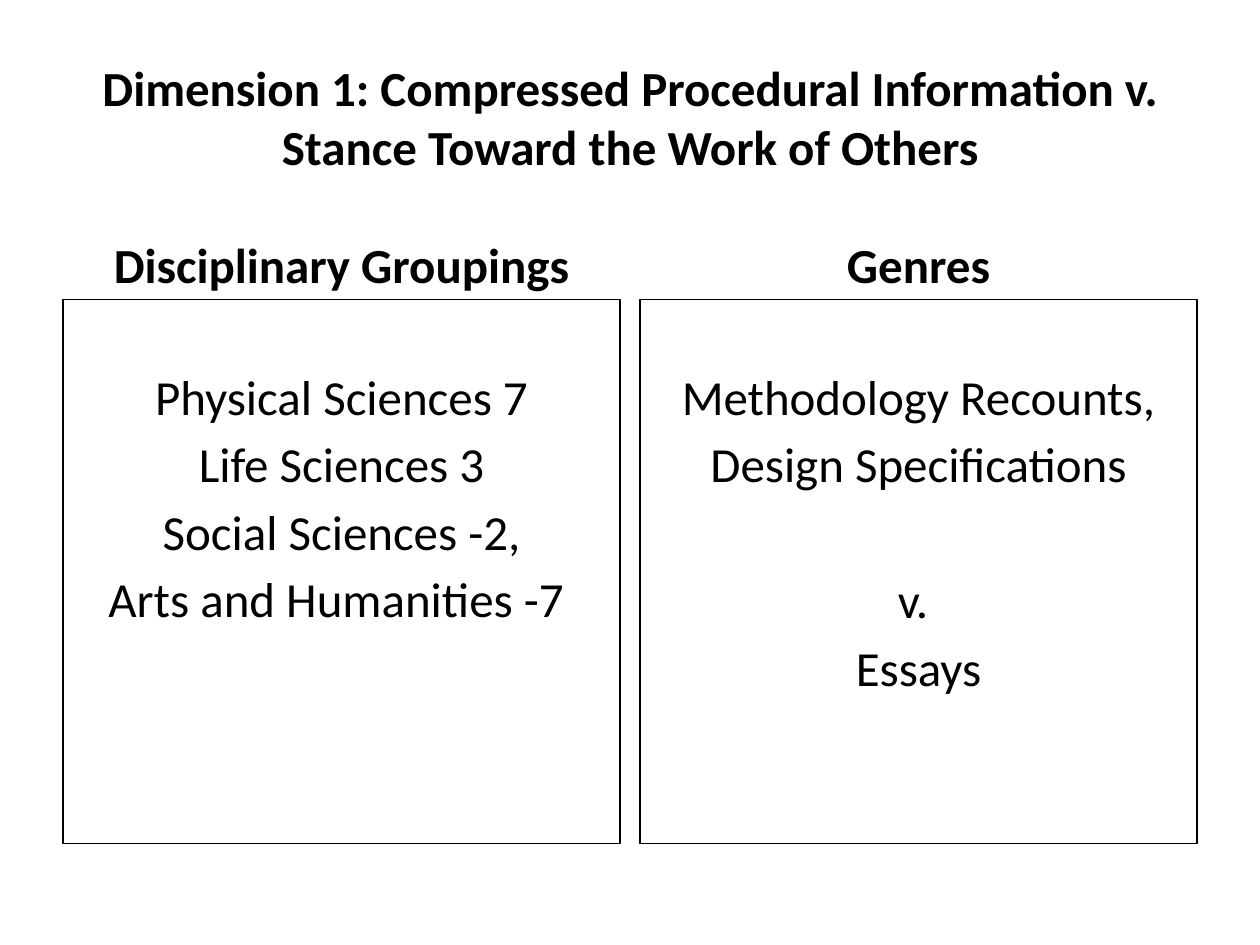
from dataclasses import dataclass
from typing import Any

from lxml.etree import SubElement
from pptx import Presentation
from pptx.dml.color import RGBColor
from pptx.enum.text import MSO_ANCHOR as Anchor, MSO_AUTO_SIZE as Fit, PP_ALIGN as Align
from pptx.oxml.ns import qn
from pptx.util import Inches, Pt

WIDTH, HEIGHT = 10, 7.5
COMPARISON_LAYOUT = 4
MARGIN, COLUMN, GUTTER = 0.05, 0.442, 0.016
HEADING_TOP, HEADING_HEIGHT = 0.224, 0.093
LIST_HEIGHT = 0.576
COLUMNS = [
    ("Disciplinary Groupings",
     ["Physical Sciences 7", "Life Sciences 3", "Social Sciences -2,",
      "Arts and Humanities -7 "], {}),
    ("Genres",
     ["Methodology Recounts,", "Design Specifications", "v. ", "Essays"], {2: 44}),
]


def colour(code):
    """Turn a hex string into a colour."""
    return RGBColor.from_string(code)


@dataclass
class Composer:
    """Hold the style and the current slide."""

    page: Any
    font: str = "Calibri"
    size: int = 28
    ink: str = "000000"
    list_inset: int = 38

    def place(self, index, left, top, width, height, anchor):
        """Move a template placeholder, given shares of the slide."""
        box = next(item for item in self.page.placeholders
                   if item.placeholder_format.idx == index)
        bounds = {"left": Inches(left * WIDTH), "top": Inches(top * HEIGHT),
                  "width": Inches(width * WIDTH), "height": Inches(height * HEIGHT)}
        for name, value in bounds.items():
            setattr(box, name, value)
        frame_format = {"auto_size": Fit.NONE, "word_wrap": True, "vertical_anchor": anchor}
        for name, value in frame_format.items():
            setattr(box.text_frame, name, value)
        return box

    def fill_line(self, para, text, bold):
        """Fill a paragraph with one centred span."""
        para.alignment = Align.CENTER
        span = para.add_run()
        span.text = text
        span_format = {"name": self.font, "size": Pt(self.size), "bold": bold}
        for name, value in span_format.items():
            setattr(span.font, name, value)
        span.font.color.rgb = colour(self.ink)

    def heading(self, index, text, bounds, anchor):
        """Add a bold title or column heading."""
        box = self.place(index, *bounds, anchor)
        self.fill_line(box.text_frame.paragraphs[0], text, True)

    def listing(self, index, lines, gaps, bounds):
        """Add an outlined list without bullets, with extra gaps before some lines."""
        box = self.place(index, *bounds, Anchor.TOP)
        box.line.color.rgb = colour(self.ink)
        box.line.width = Pt(0.75)
        frame = box.text_frame
        frame.margin_top = Pt(self.list_inset)
        for number, line in enumerate(lines):
            para = frame.add_paragraph() if number else frame.paragraphs[0]
            self.fill_line(para, line, False)
            gap = gaps.get(number, 5 if number else 0)
            para.space_before = Pt(gap)
            properties = para._p.get_or_add_pPr()
            for name in ("marL", "indent"):
                properties.set(name, "0")
            SubElement(properties, qn("a:buNone"))


def main():
    """Build and save the deck."""
    deck = Presentation()
    deck.slide_width, deck.slide_height = Inches(WIDTH), Inches(HEIGHT)
    page = deck.slides.add_slide(deck.slide_layouts[COMPARISON_LAYOUT])
    composer = Composer(page)
    composer.heading(
        0, "Dimension 1: Compressed Procedural Information v. Stance Toward the Work of Others",
        (MARGIN, 0.04, 1 - 2 * MARGIN, 0.167), Anchor.MIDDLE)
    for number, (heading, lines, gaps) in enumerate(COLUMNS):
        left = MARGIN + number * (COLUMN + GUTTER)
        index = 1 + 2 * number
        composer.heading(index, heading, (left, HEADING_TOP, COLUMN, HEADING_HEIGHT),
                         Anchor.BOTTOM)
        composer.listing(index + 1, lines, gaps,
                         (left, HEADING_TOP + HEADING_HEIGHT, COLUMN, LIST_HEIGHT))
    deck.save("out.pptx")


if __name__ == "__main__":
    main()
